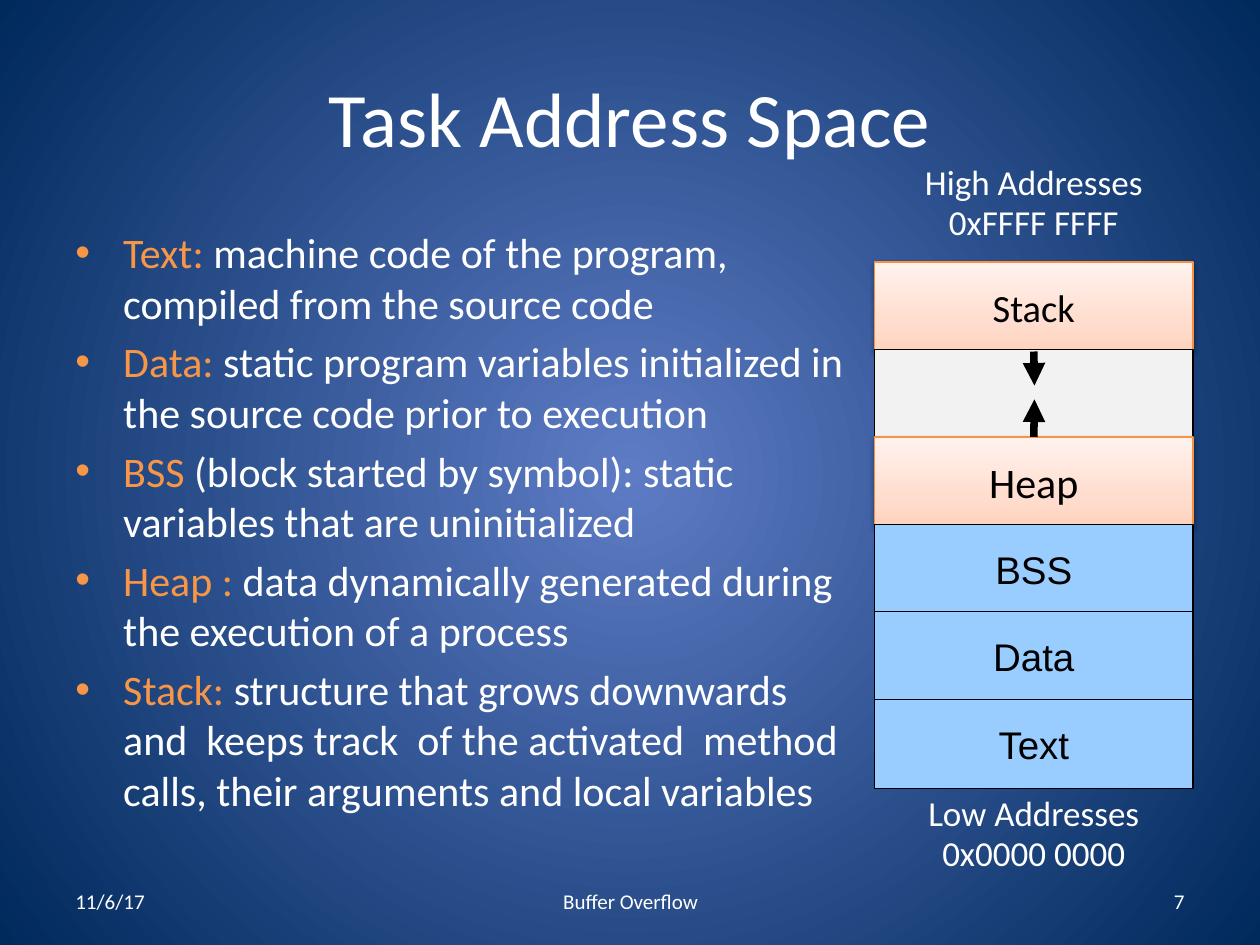
import pptx
import pptx.dml.color
import pptx.enum.shapes
import pptx.enum.text
import pptx.oxml
import pptx.oxml.ns
import pptx.util
from pptx.util import Inches

COLORS = {
    "white": "FFFFFF", "black": "000000", "orange": "F79646",
    "border": "F69240", "gap": "F2F2F2", "static": "99CCFF",
    "center": "5E7CC5", "edge": "00295C",
    "peach": "FFD2BD", "light peach": "FFDED0", "pale peach": "FFF2ED",
}
NAMESPACE = pptx.oxml.ns.nsdecls("a")
ALIGN = pptx.enum.text.PP_ALIGN
ANCHOR = pptx.enum.text.MSO_ANCHOR
rgb = pptx.dml.color.RGBColor.from_string


def write_text(frame, paragraphs, size=12, font="Calibri", color="white",
               align=ALIGN.LEFT, anchor=ANCHOR.TOP, wrap=True,
               line_spacing=None, space_before=0, bullet=None):
    """Each paragraph is a list of (text, color) runs or a plain string."""
    frame.word_wrap = wrap
    frame.vertical_anchor = anchor
    for index, content in enumerate(paragraphs):
        paragraph = frame.paragraphs[0] if index == 0 else frame.add_paragraph()
        paragraph.alignment = align
        paragraph.space_before = pptx.util.Pt(space_before)
        if line_spacing:
            paragraph.line_spacing = line_spacing
        if bullet:
            properties = paragraph._p.get_or_add_pPr()
            properties.set("marL", str(Inches(0.38)))
            properties.set("indent", str(-Inches(0.38)))
            properties.append(pptx.oxml.parse_xml(f'<a:buFont {NAMESPACE} typeface="Arial"/>'))
            properties.append(pptx.oxml.parse_xml(f'<a:buChar {NAMESPACE} char="{bullet}"/>'))
        runs = [(content, color)] if isinstance(content, str) else content
        for text, run_color in runs:
            run = paragraph.add_run()
            run.text = text
            run.font.size = pptx.util.Pt(size)
            run.font.name = font
            run.font.color.rgb = rgb(COLORS[run_color])


def set_gradient(parent, stops, direction):
    """Replace the solid fill inside parent with a gradient."""
    stop_xml = "".join(
        f'<a:gs pos="{position * 1000}"><a:srgbClr val="{COLORS[color]}"/></a:gs>'
        for position, color in stops)
    gradient = pptx.oxml.parse_xml(
        f'<a:gradFill {NAMESPACE} rotWithShape="1"><a:gsLst>{stop_xml}</a:gsLst>'
        f'{direction}</a:gradFill>')
    solid = parent.find(pptx.oxml.ns.qn("a:solidFill"))
    parent.replace(solid, gradient)


presentation = pptx.Presentation()
presentation.slide_width = Inches(10)
presentation.slide_height = Inches(7.5)
slide = presentation.slides.add_slide(presentation.slide_layouts[6])

# Background: radial gradient
slide.background.fill.solid()
slide.background.fill.fore_color.rgb = rgb(COLORS["edge"])
set_gradient(
    slide._element.cSld.bg.bgPr, [(0, "center"), (100, "edge")],
    '<a:path path="circle"><a:fillToRect l="50000" t="50000" r="50000" b="50000"/></a:path>')

# Title, footer and address labels
labels = [
    ((0.5, 0.3, 9, 1.25), ["Task Address Space"],
     dict(size=44, align=ALIGN.CENTER, anchor=ANCHOR.MIDDLE)),
    ((0.5, 6.95, 2.33, 0.4), ["11/6/17"], dict(anchor=ANCHOR.MIDDLE)),
    ((3.42, 6.95, 3.17, 0.4), ["Buffer Overflow"],
     dict(align=ALIGN.CENTER, anchor=ANCHOR.MIDDLE)),
    ((7.17, 6.95, 2.33, 0.4), ["7"], dict(align=ALIGN.RIGHT, anchor=ANCHOR.MIDDLE)),
    ((6.83, 1.25, 2.75, 0.74), ["High Addresses", "0xFFFF FFFF"],
     dict(size=20, align=ALIGN.CENTER, line_spacing=0.95)),
    ((6.83, 6.26, 2.75, 0.74), ["Low Addresses", "0x0000 0000"],
     dict(size=20, align=ALIGN.CENTER, line_spacing=0.95)),
]
for place, lines, text_format in labels:
    box = slide.shapes.add_textbox(*map(Inches, place))
    write_text(box.text_frame, lines, **text_format)

# Segment descriptions
descriptions = [
    ("Text:", " machine code of the program, compiled from the source code"),
    ("Data: ", "static program variables initialized in the source code prior to execution"),
    ("BSS", " (block started by symbol): static variables that are uninitialized"),
    ("Heap : ", "data dynamically generated during the execution of a process"),
    ("Stack: ", "structure that grows downwards and  keeps track  of the activated  "
                "method calls, their arguments and local variables"),
]
body = slide.shapes.add_textbox(Inches(0.5), Inches(1.75), Inches(6.33), Inches(5.08))
write_text(body.text_frame,
           [[(term, "orange"), (meaning, "white")] for term, meaning in descriptions],
           size=24, space_before=4.8, bullet="•")

# Memory segments, from high to low addresses
segments = [
    ("Stack", None, 22, "Calibri"),
    ("", "gap", 22, "Calibri"),
    ("Heap", None, 24, "Calibri"),
    ("BSS", "static", 22, "Arial"),
    ("Data", "static", 22, "Arial"),
    ("Text", "static", 22, "Arial"),
]
FIRST_TOP, LAST_TOP = 2.08, 5.55
pitch = (LAST_TOP - FIRST_TOP) / (len(segments) - 1)
segment_shapes = {}
for row, (name, fill, size, font) in enumerate(segments):
    segment = slide.shapes.add_shape(
        pptx.enum.shapes.MSO_SHAPE.RECTANGLE, Inches(6.94),
        Inches(FIRST_TOP + row * pitch), Inches(2.53), Inches(0.71))
    segment.shadow.inherit = False
    segment.fill.solid()
    segment.fill.fore_color.rgb = rgb(COLORS[fill or "gap"])
    segment.line.color.rgb = rgb(COLORS["black" if fill else "border"])
    segment.line.width = pptx.util.Pt(0.75)
    if fill is None:
        properties = segment._element.spPr
        set_gradient(properties, [(0, "peach"), (35, "light peach"), (100, "pale peach")],
                     '<a:lin ang="16200000" scaled="0"/>')
        properties.find(pptx.oxml.ns.qn("a:effectLst")).append(pptx.oxml.parse_xml(
            f'<a:outerShdw {NAMESPACE} blurRad="39370" dist="20320" dir="5400000" '
            f'rotWithShape="0"><a:srgbClr val="{COLORS["black"]}"><a:alpha val="38000"/>'
            '</a:srgbClr></a:outerShdw>'))
    if name:
        write_text(segment.text_frame, [name], size=size, font=font, color="black",
                   align=ALIGN.CENTER, anchor=ANCHOR.MIDDLE, wrap=False)
        segment_shapes[name] = segment

# Growth arrows: stack downwards, heap upwards
for name, site, start, end in [("Stack", 2, 2.79, 3.06), ("Heap", 0, 3.47, 3.17)]:
    arrow = slide.shapes.add_connector(
        pptx.enum.shapes.MSO_CONNECTOR.STRAIGHT,
        Inches(8.21), Inches(start), Inches(8.21), Inches(end))
    arrow.begin_connect(segment_shapes[name], site)
    arrow.line.color.rgb = rgb(COLORS["black"])
    arrow.line.width = pptx.util.Pt(4.31)
    arrow.line._get_or_add_ln().append(
        pptx.oxml.parse_xml(f'<a:tailEnd {NAMESPACE} type="triangle"/>'))
    arrow._element.spPr.append(pptx.oxml.parse_xml(f'<a:effectLst {NAMESPACE}/>'))

presentation.save("out.pptx")
